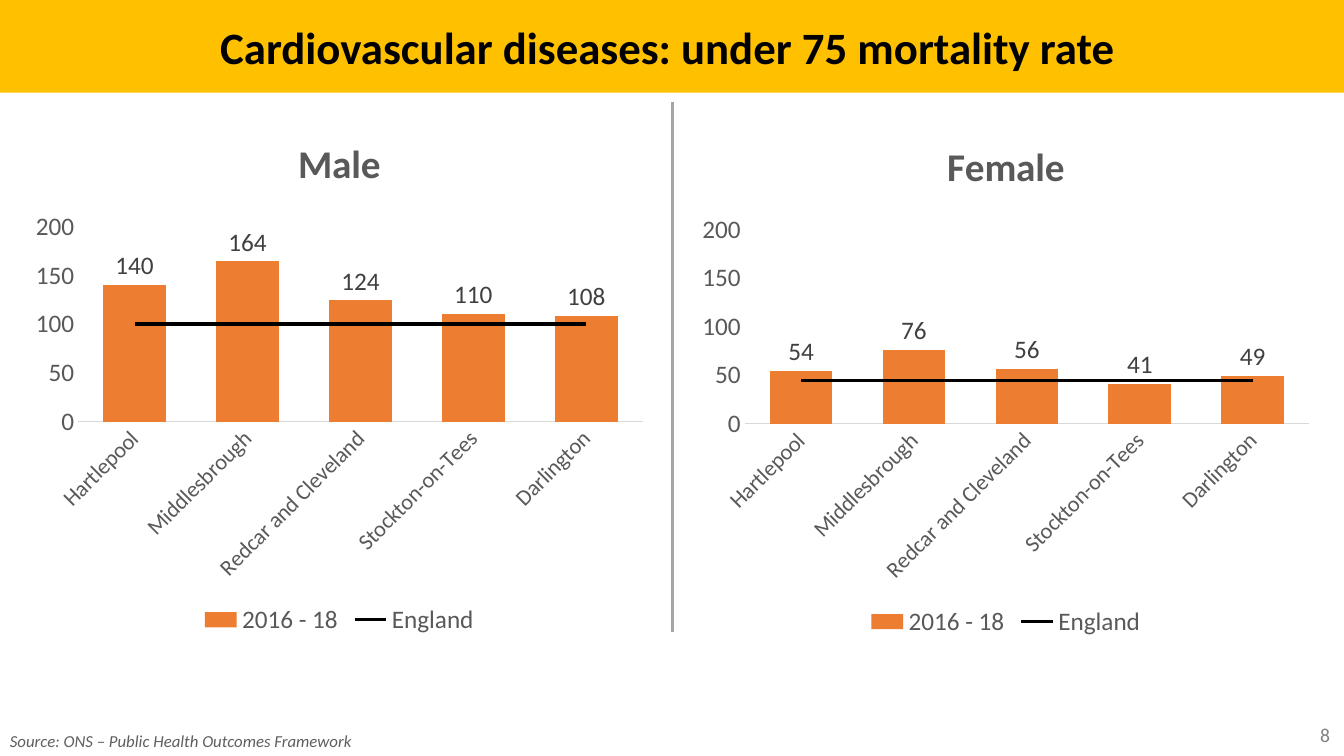
from lxml import etree
from pptx import Presentation
from pptx.chart.data import CategoryChartData
from pptx.dml.color import RGBColor
from pptx.enum import chart as ch, shapes, text
from pptx.oxml import parse_xml
from pptx.oxml.ns import nsdecls, qn
from pptx.util import Inches, Pt

FONT = "Calibri"
AREAS = ["Hartlepool", "Middlesbrough", "Redcar and Cleveland",
         "Stockton-on-Tees", "Darlington"]
PANELS = [
    ("Male", [140, 164, 124, 110, 108], 100, (0.23, 1.13, 6.27, 5.22)),
    ("Female", [54, 76, 56, 41, 49], 44, (6.84, 1.16, 6.27, 5.21)),
]


def rgb(value):
    """Return a colour from a hex string."""
    return RGBColor.from_string(value)


def set_font(font, size, color, bold=False, italic=False):
    """Apply the slide typeface with a size, colour and style."""
    font.name, font.size = FONT, Pt(size)
    font.bold, font.italic = bold, italic
    font.color.rgb = rgb(color)


def add_run(p, words, size, color, **style):
    """Add one formatted run to a paragraph."""
    r = p.add_run()
    r.text = words
    set_font(r.font, size, color, **style)


def add_title(s, words, box):
    """Turn the title placeholder into the coloured banner."""
    sp = s.shapes.title
    sp.left, sp.top, sp.width, sp.height = map(Inches, box)
    sp.fill.solid()
    sp.fill.fore_color.rgb = rgb("FFC000")
    tf = sp.text_frame
    tf.vertical_anchor = text.MSO_ANCHOR.MIDDLE
    p = tf.paragraphs[0]
    p.alignment = text.PP_ALIGN.CENTER
    add_run(p, words, 32, "000000", bold=True)


def add_note(s, words, box, size, color, align, wrap=True, italic=False):
    """Add a one-line text box at the foot of the slide."""
    tf = s.shapes.add_textbox(*map(Inches, box)).text_frame
    tf.word_wrap = wrap
    tf.vertical_anchor = text.MSO_ANCHOR.MIDDLE
    p = tf.paragraphs[0]
    p.alignment = align
    add_run(p, words, size, color, italic=italic)


def add_divider(s, x, top, bottom):
    """Draw the vertical rule between the two charts."""
    line = s.shapes.add_connector(shapes.MSO_CONNECTOR.STRAIGHT,
                                  *map(Inches, (x, top, x, bottom)))
    line.line.color.rgb = rgb("A5A5A5")
    line.line.width = Pt(2)
    etree.SubElement(line._element.spPr, qn("a:effectLst"))


def move_to_line(bar_plot):
    """Move the last bar series to a line plot on the same axes."""
    bar = bar_plot._element
    ser = bar.findall(qn("c:ser"))[-1]
    for flag in ser.findall(qn("c:invertIfNegative")):
        ser.remove(flag)
    line = parse_xml(f'<c:lineChart {nsdecls("c")}><c:grouping val="standard"/>'
                     '<c:varyColors val="0"/><c:marker val="1"/></c:lineChart>')
    line.insert(2, ser)
    for axis in bar.findall(qn("c:axId")):
        etree.SubElement(line, qn("c:axId")).set("val", axis.get("val"))
    bar.addnext(line)


def style_axes(chart):
    """Format the area axis and the rate axis."""
    areas, rates = chart.category_axis, chart.value_axis
    for axis, size in ((areas, 16), (rates, 18)):
        axis.major_tick_mark = axis.minor_tick_mark = ch.XL_TICK_MARK.NONE
        axis.has_major_gridlines = False
        set_font(axis.tick_labels.font, size, "595959")
    areas.format.line.color.rgb = rgb("D9D9D9")
    areas.format.line.width = Pt(0.75)
    areas._element.find(qn("c:txPr")).find(qn("a:bodyPr")).set("rot", "-2700000")
    rates.format.line.fill.background()
    rates.minimum_scale, rates.maximum_scale, rates.major_unit = 0, 200, 50
    rates.tick_labels.number_format = "0"
    rates.tick_labels.number_format_is_linked = False


def style_series(chart):
    """Format the area bars with labels and the England line."""
    bars, lines = chart.plots
    bars.gap_width = 80
    bars.vary_by_categories = False
    area = bars.series[0]
    area.format.fill.solid()
    area.format.fill.fore_color.rgb = rgb("ED7D31")
    labels = area.data_labels
    labels.show_value = True
    labels.position = ch.XL_LABEL_POSITION.OUTSIDE_END
    labels.number_format, labels.number_format_is_linked = "0", False
    set_font(labels.font, 18, "404040")
    england = lines.series[0]
    england.smooth = False
    england.marker.style = ch.XL_MARKER_STYLE.NONE
    england.format.line.color.rgb = rgb("000000")
    england.format.line.width = Pt(2.25)


def add_rate_chart(s, name, rates, england, box):
    """Add one bar chart with the national rate as a line."""
    data = CategoryChartData(number_format="0")
    data.categories = AREAS
    data.add_series("2016 - 18", rates)
    data.add_series("England", [england] * len(AREAS))
    chart = s.shapes.add_chart(ch.XL_CHART_TYPE.COLUMN_CLUSTERED,
                               *map(Inches, box), data).chart
    set_font(chart.font, 18, "000000")
    add_run(chart.chart_title.text_frame.paragraphs[0], name, 28, "595959", bold=True)
    move_to_line(chart.plots[0])
    style_axes(chart)
    style_series(chart)
    chart.has_legend = True
    chart.legend.position = ch.XL_LEGEND_POSITION.BOTTOM
    chart.legend.include_in_layout = False
    set_font(chart.legend.font, 18, "595959")


def main():
    """Build and save the slide."""
    prs = Presentation()
    prs.slide_width, prs.slide_height = Inches(13.33), Inches(7.5)
    s = prs.slides.add_slide(prs.slide_layouts[5])
    add_title(s, "Cardiovascular diseases: under 75 mortality rate ", (0, 0, 13.35, 0.92))
    add_divider(s, 6.67, 1.01, 6.27)
    for panel in PANELS:
        add_rate_chart(s, *panel)
    add_note(s, "Source: ONS – Public Health Outcomes Framework", (0, 7.2, 3.63, 0.3),
             12, "5F5F5F", text.PP_ALIGN.LEFT, wrap=False, italic=True)
    add_note(s, "8", (10.29, 7.09, 3, 0.4), 14, "808080", text.PP_ALIGN.RIGHT)
    prs.save("out.pptx")


if __name__ == "__main__":
    main()
